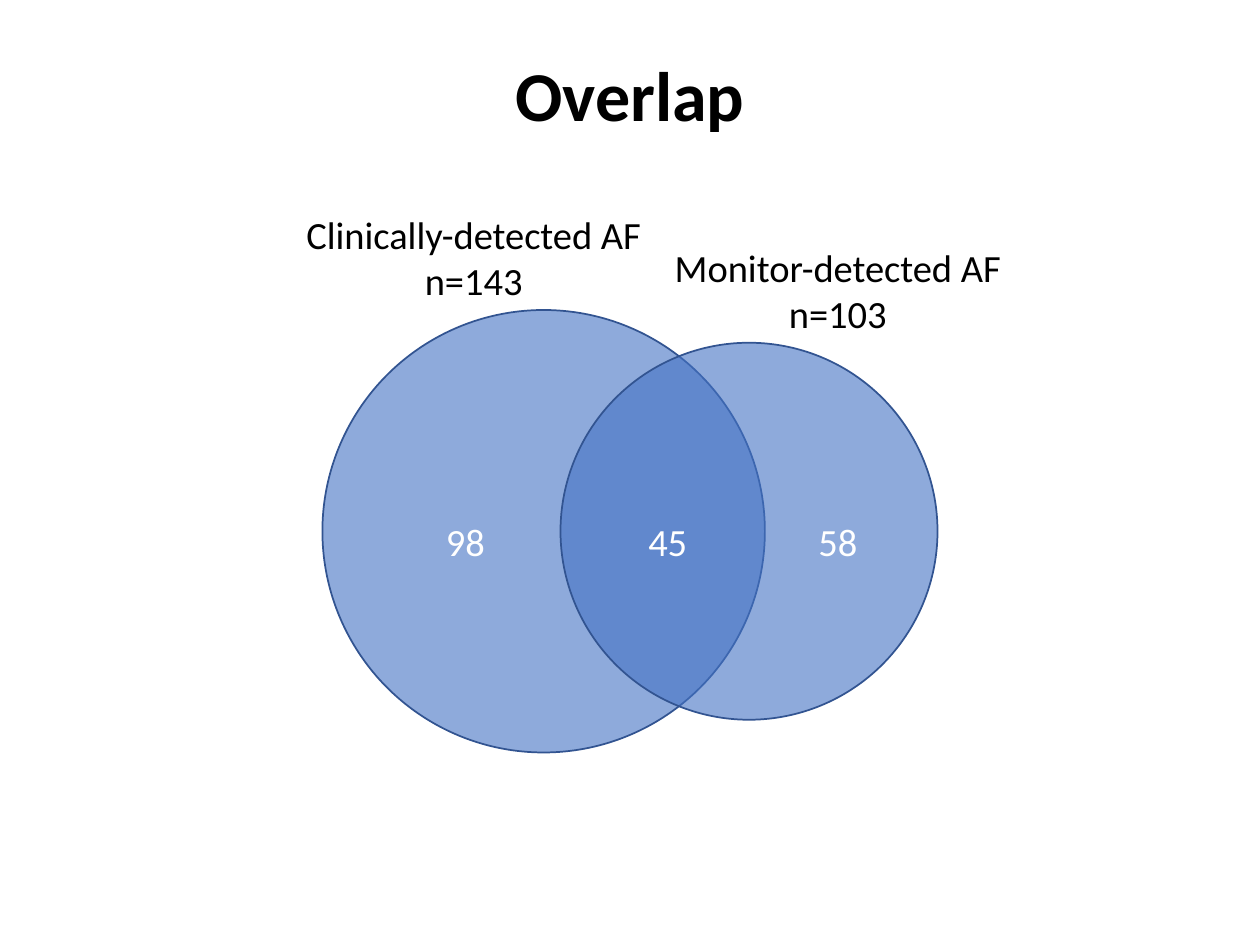
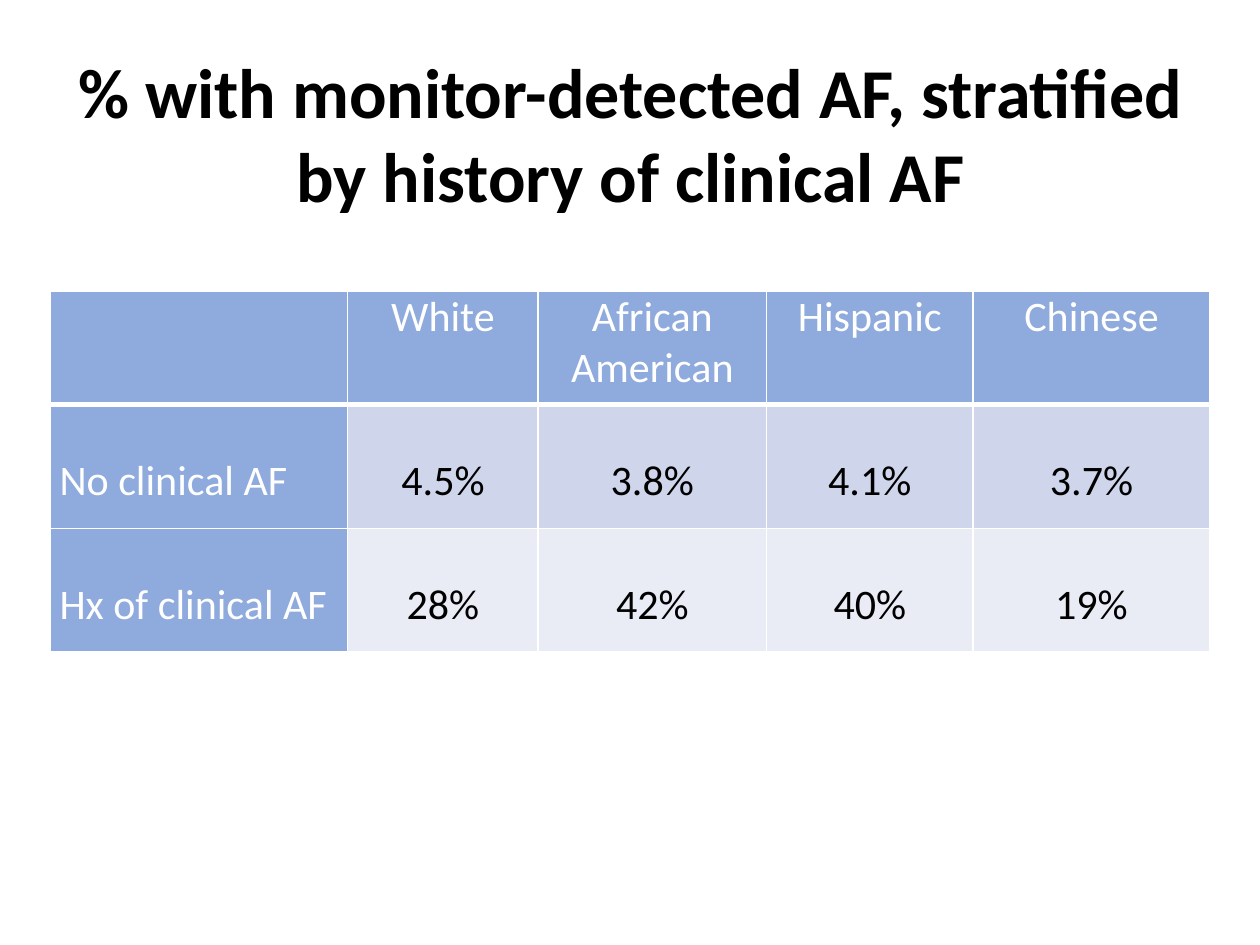
import pptx
import pptx.util
import pptx.dml.color
import pptx.enum.shapes
import pptx.enum.text
import pptx.oxml
import pptx.oxml.ns
from pptx.util import Cm, Pt

FONT = "Calibri"
COLORS = {
    "text": "000000",
    "white": "FFFFFF",
    "circle": "4472C4",
    "outline": "325491",
    "header": "8FAADC",
    "band_dark": "CFD5EA",
    "band_light": "E9EBF5",
}
CENTER = pptx.enum.text.PP_ALIGN.CENTER
LEFT = pptx.enum.text.PP_ALIGN.LEFT


def rgb(name):
    return pptx.dml.color.RGBColor.from_string(COLORS[name])


def style_paragraph(p, size, color, align, bold=False):
    p.alignment = align
    p.font.name = FONT
    p.font.size = Pt(size)
    p.font.bold = bold
    p.font.color.rgb = rgb(color)


def add_titled_slide(prs, title, box):
    s = prs.slides.add_slide(prs.slide_layouts.get_by_name("Title Only"))
    sp = s.shapes.title
    sp.left, sp.top, sp.width, sp.height = (Cm(v) for v in box)
    tf = sp.text_frame
    tf.text = title
    tf.vertical_anchor = pptx.enum.text.MSO_ANCHOR.MIDDLE
    style_paragraph(tf.paragraphs[0], 40, "text", CENTER, bold=True)
    return s


def add_text(shapes, lines, box, color, align):
    sp = shapes.add_textbox(*(Cm(v) for v in box))
    tf = sp.text_frame
    tf.word_wrap = True
    tf.text = "\n".join(lines)
    for p in tf.paragraphs:
        style_paragraph(p, 22, color, align)


def add_circle(shapes, left, top, diameter):
    sp = shapes.add_shape(pptx.enum.shapes.MSO_SHAPE.OVAL,
                          Cm(left), Cm(top), Cm(diameter), Cm(diameter))
    sp.shadow.inherit = False
    sp.fill.solid()
    sp.fill.fore_color.rgb = rgb("circle")
    fill_color = sp.fill._xPr.find(".//" + pptx.oxml.ns.qn("a:srgbClr"))
    alpha = pptx.oxml.parse_xml(
        f'<a:alpha {pptx.oxml.ns.nsdecls("a")} val="60000"/>')
    fill_color.append(alpha)
    sp.line.color.rgb = rgb("outline")
    sp.line.width = Pt(1)


def add_venn(s, box):
    """Two overlapping circles: the large one fills the box height,
    the small one is centred vertically at the right edge."""
    left, top, width, height = box
    small = 7.6
    small_top = top + (height - small) / 2
    group = s.shapes.add_group_shape()
    add_circle(group.shapes, left, top, height)
    add_circle(group.shapes, left + width - small, small_top, small)
    for count, dx in (("98", 2.24), ("45", 6.32), ("58", 9.75)):
        add_text(group.shapes, [count],
                 (left + dx, top + 4.06, 1.65, 1.19), "white", LEFT)

    label_width, label_height = 7.62, 2.12
    labels = (
        ("Clinically-detected AF", "n=143", -0.76, top),
        ("Monitor-detected AF", "n=103", 6.58, small_top),
    )
    for name, total, dx, circle_top in labels:
        add_text(s.shapes, [name, total],
                 (left + dx, circle_top - label_height,
                  label_width, label_height), "text", CENTER)


def set_borders(cell, widths):
    """Draw white borders; widths maps L, R, T, B to points, in that order."""
    tc_pr = cell._tc.get_or_add_tcPr()
    for side, width in widths.items():
        tc_pr.append(pptx.oxml.parse_xml(
            f'<a:ln{side} {pptx.oxml.ns.nsdecls("a")} w="{Pt(width)}">'
            f'<a:solidFill><a:srgbClr val="{COLORS["white"]}"/></a:solidFill>'
            f'</a:ln{side}>'))


def format_cell(cell, row, col):
    set_borders(cell, {"L": 1, "R": 1, "T": 3 if row == 1 else 1,
                       "B": 3 if row == 0 else 1})
    heading = row == 0 or col == 0
    bands = ("header", "band_dark", "band_light")
    cell.fill.solid()
    cell.fill.fore_color.rgb = rgb("header" if heading else bands[row])
    cell.margin_left = cell.margin_right = Cm(0.18)
    cell.margin_top = cell.margin_bottom = 0
    p = cell.text_frame.paragraphs[0]
    style_paragraph(p, 24, "white" if heading else "text",
                    CENTER if col else LEFT)
    p.space_before = p.space_after = Pt(5 if row else 4)
    if row:
        p.line_spacing = 2.0
        if col == 0:
            p_pr = p._p.get_or_add_pPr()
            p_pr.set("marL", str(Cm(0.61)))
            p_pr.set("indent", str(-Cm(0.61)))


def add_rates_table(s, box):
    rows = (
        ("", "White", "African American", "Hispanic", "Chinese"),
        ("No clinical AF", "4.5%", "3.8%", "4.1%", "3.7%"),
        ("Hx of clinical AF", "28%", "42%", "40%", "19%"),
    )
    frame = s.shapes.add_table(len(rows), len(rows[0]),
                               *(Cm(v) for v in box))
    table = frame.table
    table.first_row = table.horz_banding = False
    for column, width in zip(table.columns, (5.99, 3.84, 4.6, 4.17, 4.77)):
        column.width = Cm(width)
    for table_row, height in zip(table.rows, (2.29, 2.49, 2.49)):
        table_row.height = Cm(height)
    for i, values in enumerate(rows):
        for j, value in enumerate(values):
            cell = table.cell(i, j)
            cell.text = value
            format_cell(cell, i, j)


def main():
    prs = pptx.Presentation()
    prs.slide_width, prs.slide_height = Cm(25.4), Cm(19.05)

    s = add_titled_slide(prs, "Overlap", (1.27, 0.64, 22.86, 2.51))
    add_venn(s, (6.5, 6.25, 12.4, 8.92))

    s = add_titled_slide(
        prs, "% with monitor-detected AF, stratified by history of clinical AF",
        (0.69, 0.79, 24.05, 3.76))
    add_rates_table(s, (1.02, 5.87, 23.37, 7.27))

    prs.save("out.pptx")


if __name__ == "__main__":
    main()
